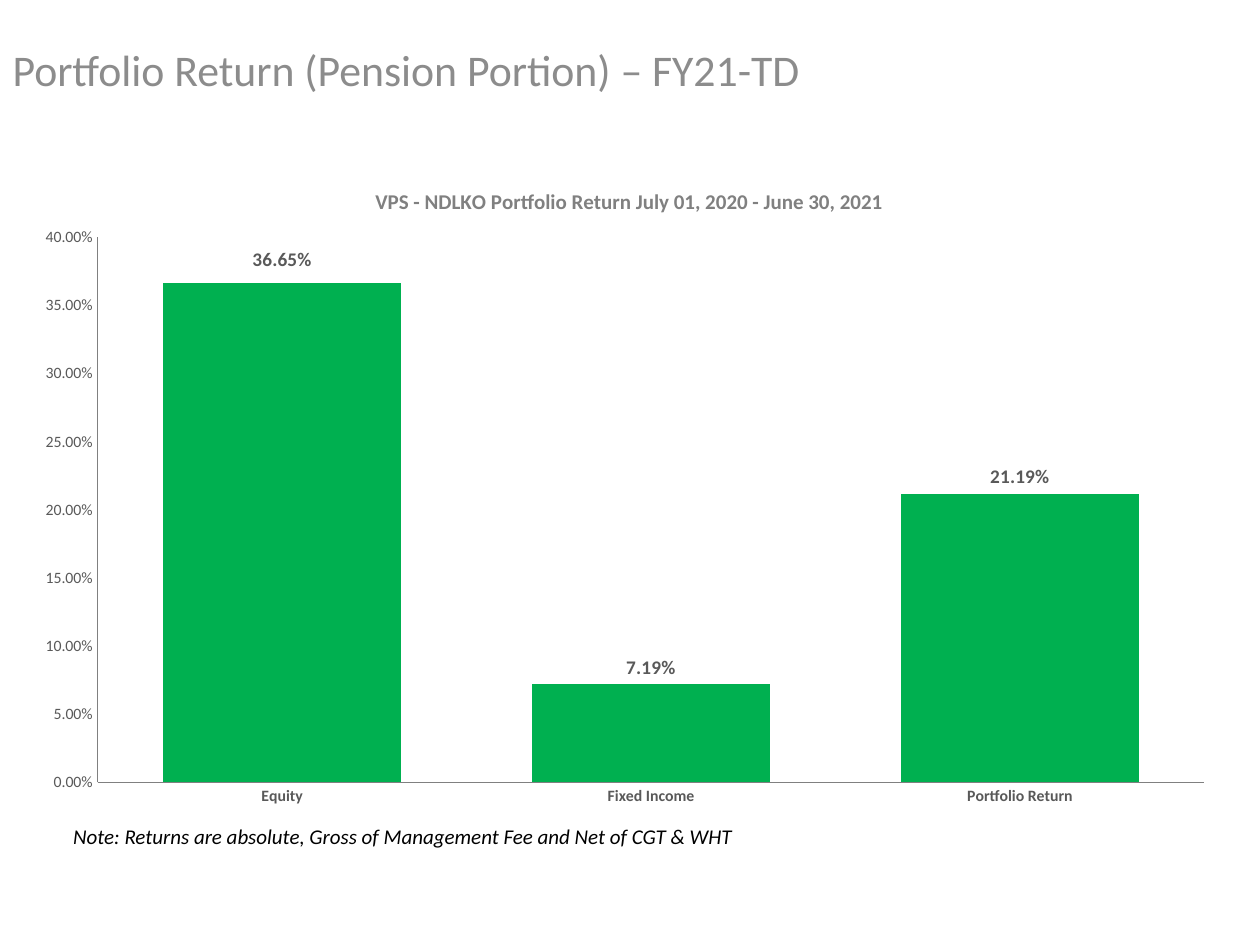
"""Build the pension portfolio return slide."""
from dataclasses import dataclass
from typing import Any

from lxml.etree import SubElement as Sub
from pptx import Presentation
from pptx.chart.data import CategoryChartData as Data
from pptx.dml.color import RGBColor as Rgb
from pptx.enum.chart import XL_CHART_TYPE as Kind, XL_LABEL_POSITION as Spot, XL_TICK_MARK as Tick
from pptx.enum.text import MSO_ANCHOR as Anchor
from pptx.oxml.ns import qn
from pptx.util import Inches, Pt

WIDE, HIGH = Inches(10), Inches(7.5)
PERCENT = "0.00%"


@dataclass
class Bar:
    """One column: its name, value and label lift as a share of the chart."""
    name: str
    value: float
    lift: float


BARS = [Bar("Equity", 0.3665, -0.06), Bar("Fixed Income", 0.0719, -0.05),
        Bar("Portfolio Return", 0.2119, -0.05)]


def area(left: float, top: float, wide: float, high: float) -> tuple[int, ...]:
    """Turn shares of the slide into a box."""
    return int(left * WIDE), int(top * HIGH), int(wide * WIDE), int(high * HIGH)


def put(item: Any, **values: Any) -> None:
    """Set attributes from a dict of values."""
    for key, value in values.items():
        setattr(item, key, value)


def style(font: Any, size: float, tint: str, **extra: Any) -> None:
    """Format a font."""
    put(font, **({"name": "Calibri", "size": Pt(size)} | extra))
    font.color.rgb = Rgb.from_string(tint)


def paint(fill: Any, tint: str) -> None:
    """Fill with one plain colour."""
    fill.solid()
    fill.fore_color.rgb = Rgb.from_string(tint)


def place(after: Any, **parts: Any) -> None:
    """Add a manual chart layout behind an element."""
    for old in after.getparent().findall(qn("c:layout")):
        after.getparent().remove(old)
    frame = after.makeelement(qn("c:layout"))
    after.addnext(frame)
    manual = Sub(frame, qn("c:manualLayout"))
    for tag, value in parts.items():
        Sub(manual, qn(f"c:{tag}")).set("val", str(value))


def head(slide: Any) -> None:
    """Fill the slide title."""
    title = slide.shapes.title
    put(title, **dict(zip(("left", "top", "width", "height"), area(0, 1 / 30, 1, 0.08))))
    frame = title.text_frame
    put(frame, text="Portfolio Return (Pension Portion) – FY21-TD",
        vertical_anchor=Anchor.MIDDLE, word_wrap=True)
    para = frame.paragraphs[0]
    para.alignment = 1
    style(para.runs[0].font, 25, "8C8C8C")


def note(slide: Any) -> None:
    """Add the one-cell note."""
    table = slide.shapes.add_table(1, 1, *area(0.058, 13 / 15, 0.55, 1 / 30)).table
    put(table, first_row=False, horz_banding=False)
    cell = table.cell(0, 0)
    cell.fill.background()
    put(cell, text="Note: Returns are absolute, Gross of Management Fee and Net of CGT & WHT",
        vertical_anchor=Anchor.BOTTOM, margin_left=0, margin_right=0, margin_top=0,
        margin_bottom=0)
    style(cell.text_frame.paragraphs[0].runs[0].font, 12, "000000", italic=True)


def plot(slide: Any) -> None:
    """Add the column chart of returns."""
    data = Data(number_format=PERCENT)
    data.categories = [bar.name for bar in BARS]
    data.add_series("Series 1", [bar.value for bar in BARS])
    chart = slide.shapes.add_chart(Kind.COLUMN_STACKED, *area(0.017, 1 / 6, 0.958, 0.7), data).chart
    put(chart, has_legend=False, has_title=True)
    style(chart.font, 10, "000000", name="Manrope")

    frame = chart.chart_title.text_frame
    frame.text = "VPS - NDLKO Portfolio Return July 01, 2020 - June 30, 2021"
    style(frame.paragraphs[0].runs[0].font, 12, "808080", bold=True)
    chart.chart_title.include_in_layout = False
    tag = chart.chart_title._element.find(qn("c:tx"))
    place(tag, xMode="edge", yMode="edge", x=0.29, y=0.04)

    for axis, bold in ((chart.category_axis, True), (chart.value_axis, False)):
        put(axis, has_major_gridlines=False, major_tick_mark=Tick.NONE, minor_tick_mark=Tick.NONE)
        style(axis.tick_labels.font, 9, "595959", bold=bold)
        paint(axis.format.line.fill, "808080")
        axis.format.line.width = Pt(0.75)
    put(chart.value_axis, minimum_scale=0, maximum_scale=0.4, major_unit=0.05)
    put(chart.value_axis.tick_labels, number_format=PERCENT, number_format_is_linked=False)

    group = chart.plots[0]
    put(group, gap_width=55, overlap=100, vary_by_categories=False, has_data_labels=True)
    put(group.data_labels, show_value=True, number_format=PERCENT, number_format_is_linked=False)
    series = group.series[0]
    paint(series.format.fill, "00B050")
    for spot, bar in enumerate(BARS):
        label = series.points[spot].data_label
        style(label.font, 11, "595959", bold=True)
        label.position = Spot.INSIDE_END
        mark = series._element.xpath(f"c:dLbls/c:dLbl/c:idx[@val='{spot}']")[0]
        place(mark, x=0, y=bar.lift)

    field = chart._chartSpace.chart.plotArea
    anchor = field.makeelement(qn("c:layout"))
    field.insert(0, anchor)
    place(anchor, layoutTarget="inner", xMode="edge", yMode="edge", x=0.07, y=0.12, w=0.91, h=0.82)


def main() -> None:
    """Build and save the slide."""
    deck = Presentation()
    put(deck, slide_width=WIDE, slide_height=HIGH)
    slide = deck.slides.add_slide(deck.slide_layouts[5])
    head(slide)
    note(slide)
    plot(slide)
    deck.save("out.pptx")


if __name__ == "__main__":
    main()
